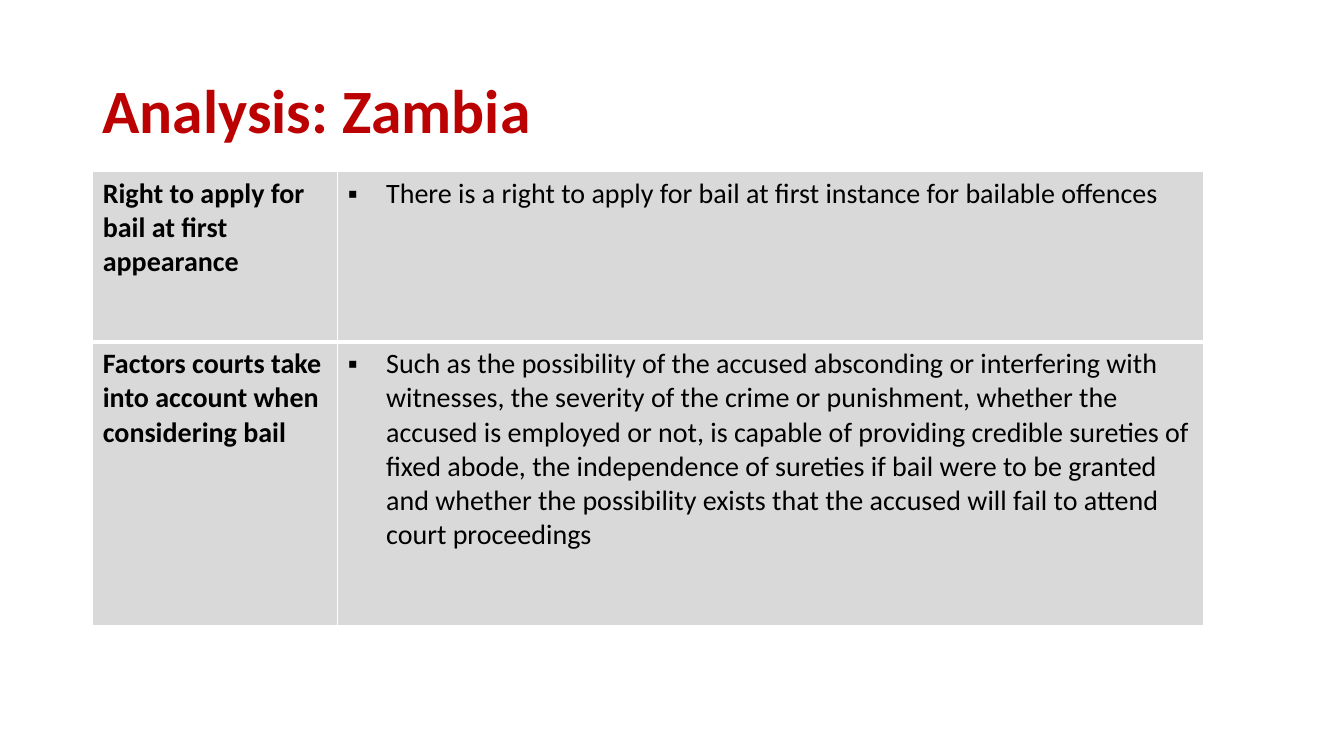
import pptx
import pptx.dml.color
import pptx.enum.text
import pptx.oxml.ns
import pptx.util
from lxml import etree

Inches = pptx.util.Inches
Pt = pptx.util.Pt
RED = pptx.dml.color.RGBColor(0xBB, 0x01, 0x01)
BLACK = pptx.dml.color.RGBColor(0, 0, 0)
WHITE = pptx.dml.color.RGBColor(0xFF, 0xFF, 0xFF)
GREY = pptx.dml.color.RGBColor(0xD9, 0xD9, 0xD9)

FINDINGS = [
    ("Right to apply for bail at first appearance",
     "There is a right to apply for bail at first instance for bailable offences"),
    ("Factors courts take into account when considering bail",
     "Such as the possibility of the accused absconding or interfering with "
     "witnesses, the severity of the crime or punishment, whether the accused is "
     "employed or not, is capable of providing credible sureties of fixed abode, "
     "the independence of sureties if bail were to be granted and whether the "
     "possibility exists that the accused will fail to attend court proceedings"),
]


def add_child(parent, tag, **attributes):
    return etree.SubElement(parent, pptx.oxml.ns.qn(tag), **attributes)


class AnalysisSlide:
    font_name = "Calibri"

    def __init__(self, presentation):
        self.slide = presentation.slides.add_slide(presentation.slide_layouts[6])

    def add_text(self, paragraph, text, size, color, bold):
        run = paragraph.add_run()
        run.text = text
        run.font.name = self.font_name
        run.font.size = Pt(size)
        run.font.bold = bold
        run.font.color.rgb = color

    def title(self, text, left, top, width, height):
        heading = self.slide.shapes.add_textbox(
            Inches(left), Inches(top), Inches(width), Inches(height))
        frame = heading.text_frame
        frame.word_wrap = True
        frame.vertical_anchor = pptx.enum.text.MSO_ANCHOR.MIDDLE
        frame.paragraphs[0].line_spacing = 0.9
        self.add_text(frame.paragraphs[0], text, 44, RED, True)

    def bullet(self, paragraph):
        properties = paragraph._p.get_or_add_pPr()
        properties.set("marL", str(Inches(0.38)))
        properties.set("indent", str(-Inches(0.38)))
        add_child(properties, "a:buFont", typeface="Arial")
        add_child(properties, "a:buChar", char="▪")

    def borders(self, cell, widths):
        properties = cell._tc.get_or_add_tcPr()
        for side, width in widths.items():
            line = add_child(properties, f"a:ln{side}", w=str(Pt(width)))
            fill = add_child(line, "a:solidFill")
            add_child(fill, "a:srgbClr", val=str(WHITE))

    def table(self, findings, left, top, column_widths, row_heights):
        table = self.slide.shapes.add_table(
            len(row_heights), len(column_widths), Inches(left), Inches(top),
            Inches(sum(column_widths)), Inches(sum(row_heights))).table
        table.first_row = False
        table.horz_banding = False
        for column, width in zip(table.columns, column_widths):
            column.width = Inches(width)
        for row, height in zip(table.rows, row_heights):
            row.height = Inches(height)
        for row_index, finding in enumerate(findings):
            top_width, bottom_width = (1, 3) if row_index == 0 else (3, 1)
            for column_index, text in enumerate(finding):
                cell = table.cell(row_index, column_index)
                self.borders(cell, {"L": 1, "R": 1, "T": top_width, "B": bottom_width})
                cell.fill.solid()
                cell.fill.fore_color.rgb = GREY
                paragraph = cell.text_frame.paragraphs[0]
                is_topic = column_index == 0
                if not is_topic:
                    self.bullet(paragraph)
                self.add_text(paragraph, text, 20, BLACK, is_topic)


def main():
    presentation = pptx.Presentation()
    presentation.slide_width = Inches(13.33)
    presentation.slide_height = Inches(7.5)
    analysis = AnalysisSlide(presentation)
    analysis.title("Analysis: Zambia", 0.92, 0.4, 11.5, 1.45)
    analysis.table(FINDINGS, 0.92, 1.7, [2.43, 8.59], [1.69, 2.82])
    presentation.save("out.pptx")


if __name__ == "__main__":
    main()
